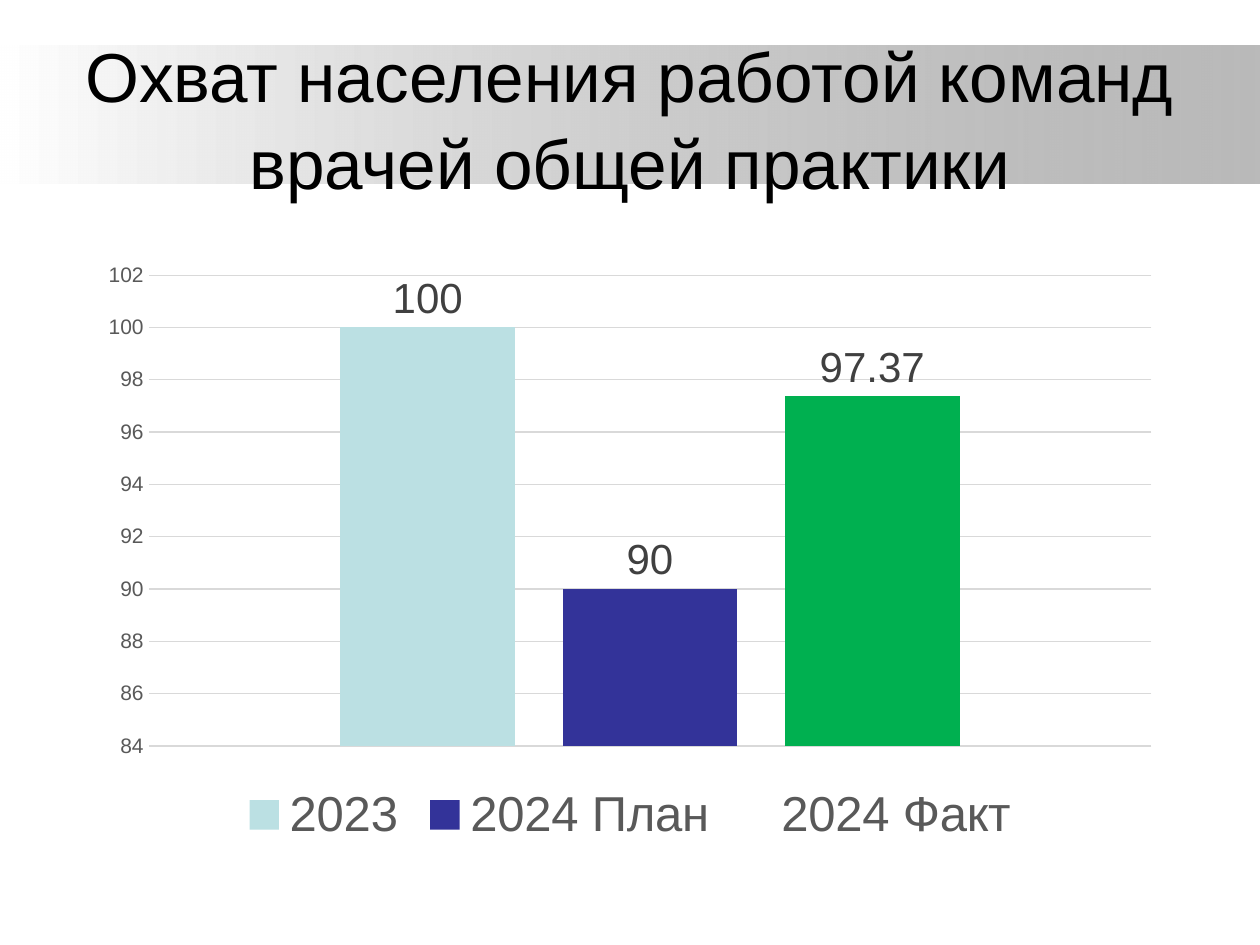
from lxml import etree
from pptx import Presentation
from pptx.chart import data
from pptx.dml import color
from pptx.enum import chart as ch, shapes, text
from pptx.oxml import ns
from pptx.util import Pt

TITLE = "Охват населения работой команд врачей общей практики"
CATS = ["1"]
SERIES = [
    ("2023", 100, "BBE0E3", None),
    ("2024 План", 90, "333399", None),
    ("2024 Факт", 97.37, "FFFFFF", "00B050"),
]
BAND = (0, 25.92, 720, 79.2)
HEAD = (36, 21.6, 648, 90)
PLOT = (49.68, 144, 620.64, 342.72)
STOPS = [("FFFFFF", 100), ("808080", 54)]


def rgb(code):
    return color.RGBColor.from_string(code)


def style(font, size, code):
    font.name = "Arial"
    font.size = Pt(size)
    font.color.rgb = rgb(code)


def paint(fill, code):
    fill.solid()
    fill.fore_color.rgb = rgb(code)


def add_band(slide):
    band = slide.shapes.add_shape(
        shapes.MSO_SHAPE.RECTANGLE, *map(Pt, BAND))
    band.shadow.inherit = False
    band.line.fill.background()
    band.fill.gradient()
    band.fill.gradient_angle = 0
    for stop, (code, alpha) in zip(band.fill.gradient_stops, STOPS):
        stop.color.rgb = rgb(code)
    tones = band.fill._xPr.iter(ns.qn("a:srgbClr"))
    for tone, (code, alpha) in zip(tones, STOPS):
        if alpha < 100:
            etree.SubElement(tone, ns.qn("a:alpha"), val=str(alpha * 1000))


def add_text(slide, words, box, size, code="000000", space=1.0):
    frame = slide.shapes.add_textbox(*map(Pt, box)).text_frame
    frame.word_wrap = True
    frame.vertical_anchor = text.MSO_ANCHOR.MIDDLE
    para = frame.paragraphs[0]
    para.alignment = text.PP_ALIGN.CENTER
    para.line_spacing = space
    run = para.add_run()
    run.text = words
    style(run.font, size, code)


def add_bars(slide):
    table = data.CategoryChartData()
    table.categories = CATS
    for name, value, code, point in SERIES:
        table.add_series(name, [value])
    chart = slide.shapes.add_chart(
        ch.XL_CHART_TYPE.COLUMN_CLUSTERED, *map(Pt, PLOT), table).chart
    style(chart.font, 10, "000000")
    chart.has_title = False
    chart.has_legend = True
    chart.legend.position = ch.XL_LEGEND_POSITION.BOTTOM
    chart.legend.include_in_layout = False
    style(chart.legend.font, 28, "595959")

    chart.category_axis.visible = False
    axis = chart.value_axis
    axis.minimum_scale, axis.maximum_scale, axis.major_unit = 84, 102, 2
    axis.major_tick_mark = ch.XL_TICK_MARK.NONE
    axis.format.line.fill.background()
    style(axis.tick_labels.font, 12, "595959")
    grid = axis.major_gridlines.format.line
    grid.color.rgb = rgb("D9D9D9")
    grid.width = Pt(0.75)

    plot = chart.plots[0]
    plot.vary_by_categories = False
    plot.gap_width, plot.overlap = 219, -27
    for bar, (name, value, code, point) in zip(plot.series, SERIES):
        paint(bar.format.fill, code)
        if point:
            paint(bar.points[0].format.fill, point)
        tags = bar.data_labels
        tags.show_value = True
        tags.position = ch.XL_LABEL_POSITION.OUTSIDE_END
        style(tags.font, 24, "404040")


def main():
    deck = Presentation()
    deck.slide_width, deck.slide_height = Pt(720), Pt(540)
    slide = deck.slides.add_slide(deck.slide_layouts[6])
    add_band(slide)
    add_text(slide, TITLE, HEAD, size=39.6, space=1.04)
    add_bars(slide)
    deck.save("out.pptx")


if __name__ == "__main__":
    main()
